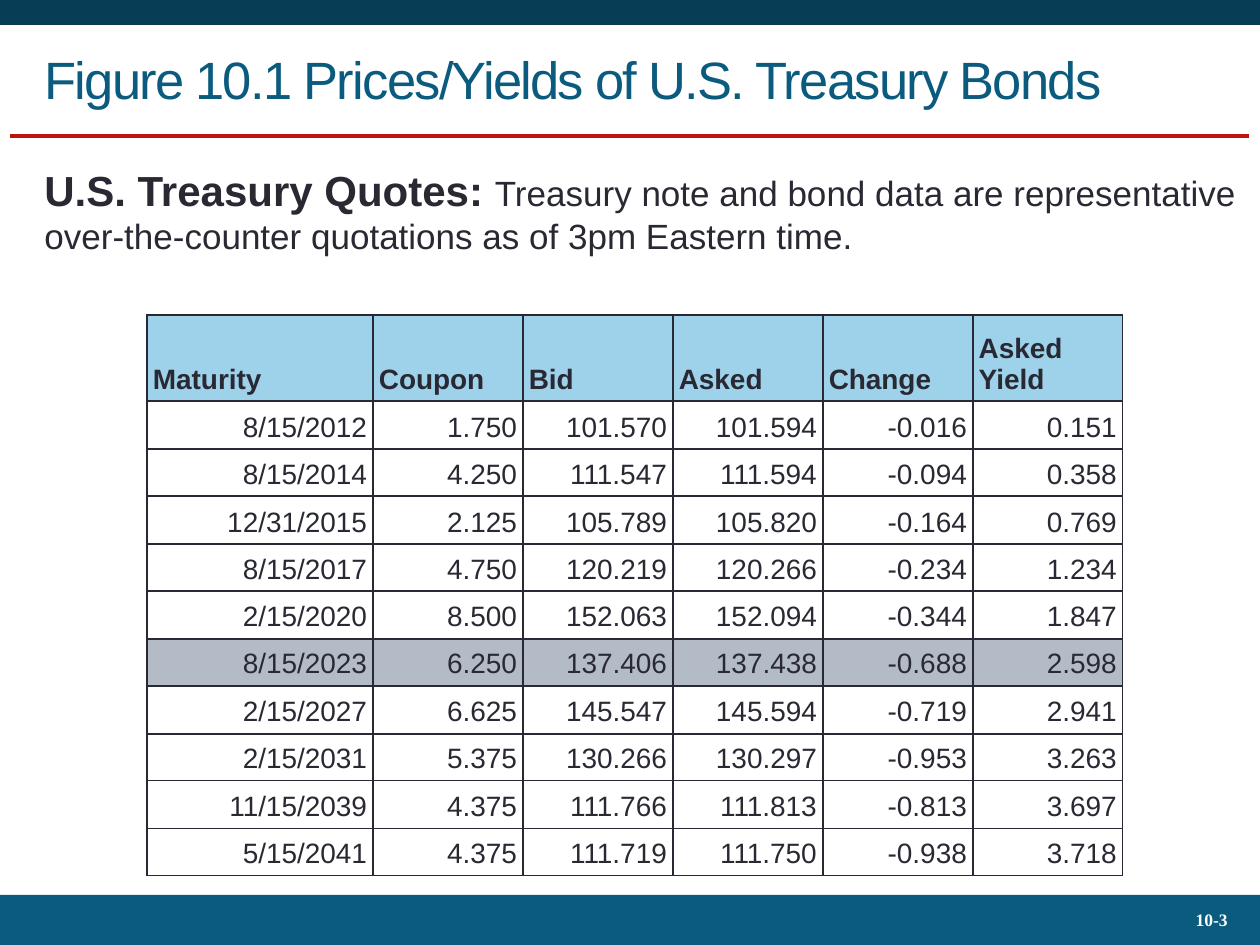
import pptx
import pptx.util
import pptx.dml.color
import pptx.enum.text
import pptx.enum.shapes
import pptx.oxml
import pptx.oxml.ns

PX = 914400 / 126
HUES = {
    "navy": "073D55", "blue": "0B5B7F", "red": "BD130F", "ink": "292934",
    "head": "9ED1EA", "mark": "B3BBC6", "white": "FFFFFF",
}
ALIGN = pptx.enum.text.PP_ALIGN
ANCHOR = pptx.enum.text.MSO_ANCHOR
NS = pptx.oxml.ns.nsdecls("a")


def px(*vals):
    return [round(v * PX) for v in vals]


def style(font, size, hue, bold=False, face="Arial"):
    font.name = face
    font.size = pptx.util.Pt(size)
    font.bold = bold
    font.color.rgb = pptx.dml.color.RGBColor.from_string(HUES[hue])


deck = pptx.Presentation()
deck.slide_width, deck.slide_height = px(1260, 945)
slide = deck.slides.add_slide(deck.slide_layouts[6])
shapes = slide.shapes

for top, high, hue in [(0, 25, "navy"), (895, 50, "blue")]:
    bar = shapes.add_shape(pptx.enum.shapes.MSO_SHAPE.RECTANGLE, *px(0, top, 1260, high))
    bar.shadow.inherit = False
    bar.fill.solid()
    bar.fill.fore_color.rgb = pptx.dml.color.RGBColor.from_string(HUES[hue])
    bar.line.fill.background()

rule = shapes.add_connector(pptx.enum.shapes.MSO_CONNECTOR.STRAIGHT, *px(10, 136, 1249, 136))
rule.line.color.rgb = pptx.dml.color.RGBColor.from_string(HUES["red"])
rule.line.width = pptx.util.Pt(2.25)
rule._element.spPr.append(pptx.oxml.parse_xml(f"<a:effectLst {NS}/>"))

paras = []
for box, anchor in [
    ((1092, 898, 148, 45), ANCHOR.MIDDLE),
    ((32, 22, 1197, 114), ANCHOR.MIDDLE),
    ((32, 158, 1228, 106), ANCHOR.TOP),
]:
    frame = shapes.add_textbox(*px(*box)).text_frame
    frame.word_wrap = True
    frame.vertical_anchor = anchor
    paras.append(frame.paragraphs[0])
page, title, intro = paras

page.text = "10-3"
page.alignment = ALIGN.RIGHT
page.line_spacing = 0.93
style(page.font, 10, "white", True, "Times New Roman")

title.text = "Figure 10.1 Prices/Yields of U.S. Treasury Bonds"
style(title.font, 30, "blue")
title.runs[0].font._element.set("spc", "-100")

for text, size, bold in [
    ("U.S. Treasury Quotes: ", 24, True),
    ("Treasury note and bond data are representative over-the-counter "
     "quotations as of 3pm Eastern time.", 20, False),
]:
    run = intro.add_run()
    run.text = text
    style(run.font, size, "ink", bold)

rows = [
    ("Maturity", "Coupon", "Bid", "Asked", "Change", "Asked Yield"),
    ("8/15/2012", "1.750", "101.570", "101.594", "-0.016", "0.151"),
    ("8/15/2014", "4.250", "111.547", "111.594", "-0.094", "0.358"),
    ("12/31/2015", "2.125", "105.789", "105.820", "-0.164", "0.769"),
    ("8/15/2017", "4.750", "120.219", "120.266", "-0.234", "1.234"),
    ("2/15/2020", "8.500", "152.063", "152.094", "-0.344", "1.847"),
    ("8/15/2023", "6.250", "137.406", "137.438", "-0.688", "2.598"),
    ("2/15/2027", "6.625", "145.547", "145.594", "-0.719", "2.941"),
    ("2/15/2031", "5.375", "130.266", "130.297", "-0.953", "3.263"),
    ("11/15/2039", "4.375", "111.766", "111.813", "-0.813", "3.697"),
    ("5/15/2041", "4.375", "111.719", "111.750", "-0.938", "3.718"),
]
fills = {0: "head", 6: "mark"}
grid = shapes.add_table(len(rows), len(rows[0]), *px(147, 315, 976, 561)).table
grid.first_row = grid.horz_banding = False
for c, col in enumerate(grid.columns):
    col.width = px(150 if c else 226)[0]
for r, vals in enumerate(rows):
    grid.rows[r].height = px(47 + r % 2 if r else 86)[0]
    for c, val in enumerate(vals):
        cell = grid.cell(r, c)
        cell.text = val
        cell.vertical_anchor = ANCHOR.BOTTOM
        cell.margin_left = cell.margin_right = px(6)[0]
        cell.margin_top = cell.margin_bottom = px(6)[0]
        para = cell.text_frame.paragraphs[0]
        para.alignment = ALIGN.RIGHT if r else ALIGN.LEFT
        style(para.font, 16, "ink", r == 0)
        props = cell._tc.get_or_add_tcPr()
        for side in ("lnL", "lnR", "lnT", "lnB"):
            props.append(pptx.oxml.parse_xml(
                f'<a:{side} {NS} w="12700"><a:solidFill>'
                f'<a:srgbClr val="{HUES["ink"]}"/></a:solidFill></a:{side}>'))
        if r in fills:
            cell.fill.solid()
            cell.fill.fore_color.rgb = pptx.dml.color.RGBColor.from_string(HUES[fills[r]])
        else:
            cell.fill.background()

deck.save("out.pptx")
